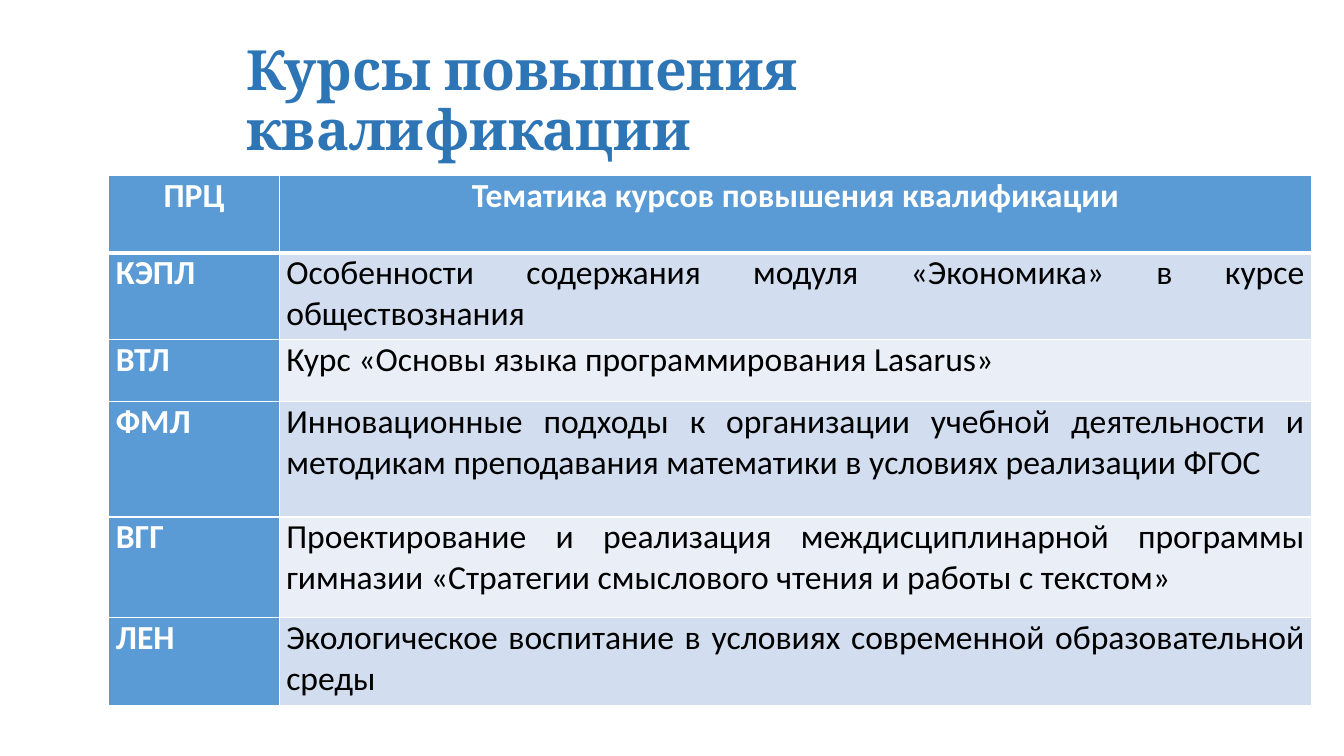
from dataclasses import dataclass

from lxml import etree
from pptx import Presentation
from pptx.dml.color import RGBColor
from pptx.enum.text import MSO_ANCHOR, MSO_AUTO_SIZE, PP_ALIGN
from pptx.oxml.ns import qn
from pptx.util import Inches, Pt

LEFT, CENTER, JUSTIFY = PP_ALIGN.LEFT, PP_ALIGN.CENTER, PP_ALIGN.JUSTIFY
TITLE_ONLY_LAYOUT = 5

TITLE = "Курсы повышения квалификации"
HEADER = ("ПРЦ", "Тематика курсов повышения квалификации")
COURSES = [
    ("КЭПЛ", "Особенности содержания модуля «Экономика» в курсе обществознания"),
    ("ВТЛ", "Курс «Основы языка программирования Lasarus»"),
    ("ФМЛ", "Инновационные подходы к организации учебной деятельности и "
            "методикам преподавания математики в условиях реализации ФГОС"),
    ("ВГГ", "Проектирование и реализация междисциплинарной программы "
            "гимназии «Стратегии смыслового чтения и работы с текстом»"),
    ("ЛЕН", "Экологическое воспитание в условиях современной образовательной среды"),
]
COLUMN_WIDTHS = (1.69, 10.24)
ROW_HEIGHTS = (0.77, 0.86, 0.61, 1.15, 1, 0.87)
TABLE_LEFT, TABLE_TOP = 1.08, 1.74
TITLE_BOX = (2.34, 0.29, 10.08, 1.45)


@dataclass(frozen=True)
class Theme:
    title_font: str = "Cambria"
    table_font: str = "Calibri"
    title_size: float = 39.6
    table_size: float = 24
    title: str = "2E75B6"
    accent: str = "5B9BD5"
    bands: tuple = ("D2DEEF", "EAEFF7")
    light: str = "FFFFFF"
    dark: str = "000000"
    thin_border: float = 1
    thick_border: float = 3


THEME = Theme()


def write_text(text_frame, text, *, font, size, color, bold, align, spacing=1.0):
    paragraph = text_frame.paragraphs[0]
    paragraph.alignment = align
    paragraph.line_spacing = spacing
    run = paragraph.add_run()
    run.text = text
    run.font.name = font
    run.font.size = Pt(size)
    run.font.bold = bold
    run.font.color.rgb = RGBColor.from_string(color)


def set_borders(cell, widths):
    """Draw cell borders; widths maps a side (L, R, T, B) to points."""
    properties = cell._tc.get_or_add_tcPr()
    for side, width in widths.items():
        line = etree.SubElement(properties, qn(f"a:ln{side}"), w=str(Pt(width)))
        fill = etree.SubElement(line, qn("a:solidFill"))
        etree.SubElement(fill, qn("a:srgbClr"), val=THEME.light)


def add_title(slide):
    title = slide.shapes.title
    title.left, title.top, title.width, title.height = map(Inches, TITLE_BOX)
    frame = title.text_frame
    frame.word_wrap = True
    frame.auto_size = MSO_AUTO_SIZE.NONE
    frame.vertical_anchor = MSO_ANCHOR.MIDDLE
    write_text(frame, TITLE, font=THEME.title_font, size=THEME.title_size,
               color=THEME.title, bold=True, align=LEFT, spacing=0.9)


def format_cell(cell, text, row, column):
    is_header = row == 0
    is_accent = is_header or column == 0
    cell.margin_left = cell.margin_right = Inches(0.07)
    cell.margin_top = cell.margin_bottom = 0
    cell.vertical_anchor = MSO_ANCHOR.TOP
    thin, thick = THEME.thin_border, THEME.thick_border
    set_borders(cell, {"L": thin, "R": thin,
                       "T": thick if row == 1 else thin,
                       "B": thick if is_header else thin})
    fill = THEME.accent if is_accent else THEME.bands[(row - 1) % 2]
    cell.fill.solid()
    cell.fill.fore_color.rgb = RGBColor.from_string(fill)
    write_text(cell.text_frame, text, font=THEME.table_font, size=THEME.table_size,
               color=THEME.light if is_accent else THEME.dark, bold=is_accent,
               align=CENTER if is_header else JUSTIFY)


def add_course_table(slide):
    rows = [HEADER, *COURSES]
    table = slide.shapes.add_table(
        len(rows), len(HEADER), Inches(TABLE_LEFT), Inches(TABLE_TOP),
        Inches(sum(COLUMN_WIDTHS)), Inches(sum(ROW_HEIGHTS))).table
    for column, width in zip(table.columns, COLUMN_WIDTHS):
        column.width = Inches(width)
    for row, height in zip(table.rows, ROW_HEIGHTS):
        row.height = Inches(height)
    for row_index, texts in enumerate(rows):
        for column_index, text in enumerate(texts):
            format_cell(table.cell(row_index, column_index), text,
                        row_index, column_index)


def main():
    presentation = Presentation()
    presentation.slide_width = Inches(13.33)
    presentation.slide_height = Inches(7.5)
    slide = presentation.slides.add_slide(
        presentation.slide_layouts[TITLE_ONLY_LAYOUT])
    add_title(slide)
    add_course_table(slide)
    presentation.save("out.pptx")


if __name__ == "__main__":
    main()
